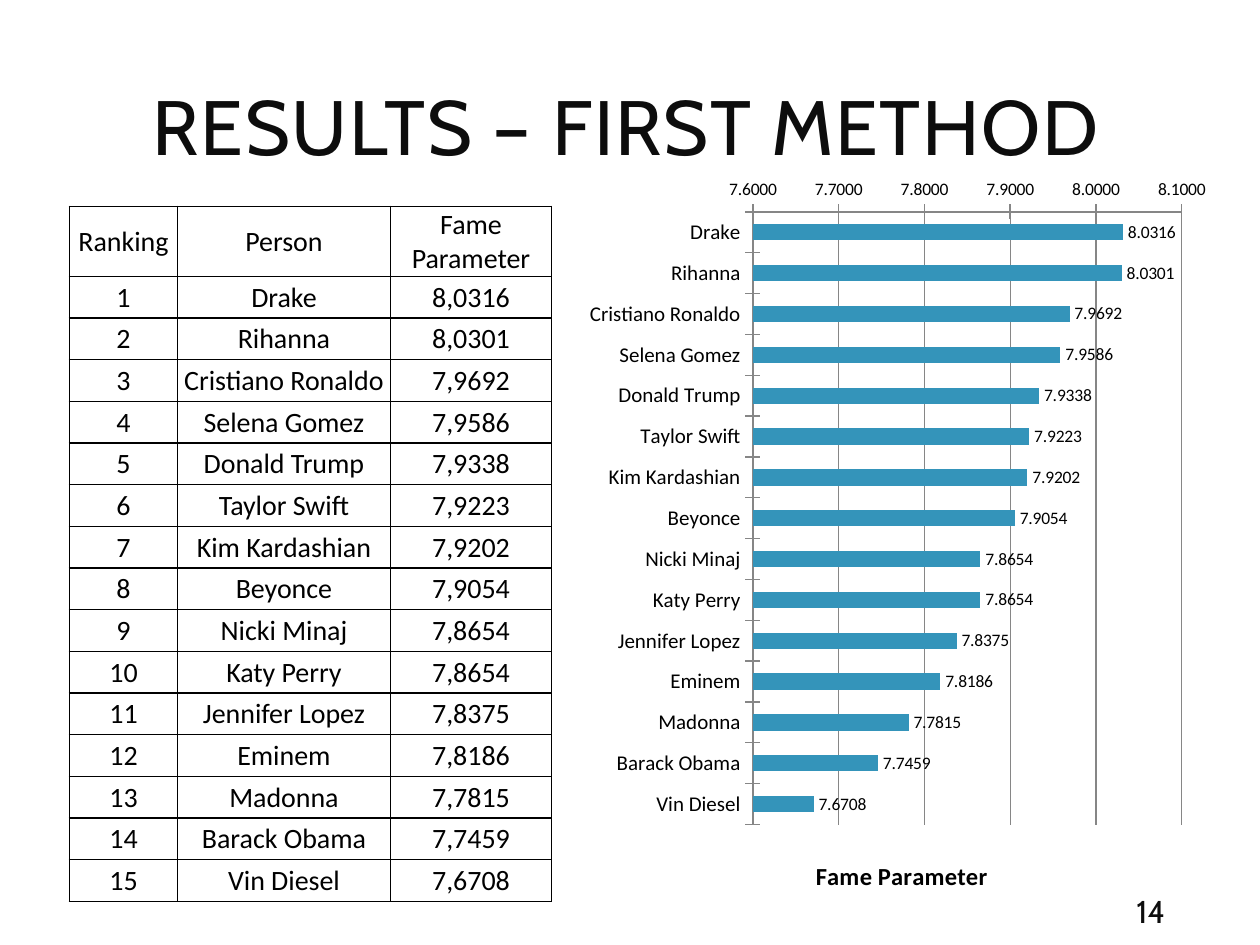
from lxml.etree import SubElement
from pptx import Presentation
from pptx.chart.data import CategoryChartData
from pptx.dml.color import RGBColor
from pptx.enum.chart import XL_CHART_TYPE as ChartType
from pptx.enum.chart import XL_LABEL_POSITION as LabelPosition
from pptx.enum.chart import XL_TICK_MARK as TickMark
from pptx.enum.text import MSO_ANCHOR as Anchor
from pptx.enum.text import PP_ALIGN as Align
from pptx.oxml.ns import qn
from pptx.util import Cm, Pt

COLORS = {"heading": "0D0D0D", "text": "000000", "bar": "3494BA", "grid": "868686"}
HEADING_FONT, BODY_FONT = "Cabin", "Calibri"
HEADERS = ["Ranking", "Person", "Fame Parameter"]
FAME = {
    "Drake": 8.0316,
    "Rihanna": 8.0301,
    "Cristiano Ronaldo": 7.9692,
    "Selena Gomez": 7.9586,
    "Donald Trump": 7.9338,
    "Taylor Swift": 7.9223,
    "Kim Kardashian": 7.9202,
    "Beyonce": 7.9054,
    "Nicki Minaj": 7.8654,
    "Katy Perry": 7.8654,
    "Jennifer Lopez": 7.8375,
    "Eminem": 7.8186,
    "Madonna": 7.7815,
    "Barack Obama": 7.7459,
    "Vin Diesel": 7.6708,
}


def color(name):
    return RGBColor.from_string(COLORS[name])


def set_layout(host, index, **fractions):
    """Place a chart part by fractions of the chart's size."""
    for old in host.findall(qn("c:layout")):
        host.remove(old)
    layout = SubElement(host, qn("c:layout"))
    host.insert(index, layout)
    manual = SubElement(layout, qn("c:manualLayout"))
    if "w" in fractions:
        SubElement(manual, qn("c:layoutTarget")).set("val", "inner")
    for side in ("xMode", "yMode"):
        SubElement(manual, qn(f"c:{side}")).set("val", "edge")
    for key, value in fractions.items():
        SubElement(manual, qn(f"c:{key}")).set("val", str(value))


class SlideBuilder:
    """Holds the page and the style shared by its elements."""

    def __init__(self, page):
        self.page = page

    def style(self, font, size, name=BODY_FONT, tint="text", bold=False):
        font.name, font.size, font.bold = name, Pt(size), bold
        font.color.rgb = color(tint)

    def frame(self, box, left, top, width, height):
        box.left, box.top, box.width, box.height = map(Cm, (left, top, width, height))
        text = box.text_frame
        text.word_wrap = True
        text.vertical_anchor = Anchor.MIDDLE
        text.margin_left = text.margin_right = Cm(0.33)
        text.margin_top = text.margin_bottom = Cm(0.18)
        return text.paragraphs[0]

    def title(self, words, *place):
        para = self.frame(self.page.shapes.title, *place)
        para.alignment = Align.CENTER
        para.line_spacing = 0.8
        span = para.add_run()
        span.text = words
        self.style(span.font, 44, HEADING_FONT, "heading")
        span._r.get_or_add_rPr().set("spc", "100")

    def page_number(self, number, *place):
        box = self.page.shapes.add_textbox(*map(Cm, place))
        span = self.frame(box, *place).add_run()
        span.text = str(number)
        self.style(span.font, 18, HEADING_FONT, "heading")

    def cell(self, cell, words):
        cell.vertical_anchor = Anchor.MIDDLE
        cell.margin_left = cell.margin_right = cell.margin_top = Cm(0.02)
        cell.margin_bottom = 0
        para = cell.text_frame.paragraphs[0]
        para.alignment = Align.CENTER
        span = para.add_run()
        span.text = words
        self.style(span.font, 16)
        properties = cell._tc.get_or_add_tcPr()
        for side in ("lnL", "lnR", "lnT", "lnB"):
            line = SubElement(properties, qn(f"a:{side}"), w=str(Pt(1)))
            fill = SubElement(line, qn("a:solidFill"))
            SubElement(fill, qn("a:srgbClr"), val=COLORS["text"])
        cell.fill.background()

    def table(self, rows, left, top, widths, header_height, row_height):
        heights = [header_height] + [row_height] * (len(rows) - 1)
        size = (left, top, sum(widths), sum(heights))
        table = self.page.shapes.add_table(
            len(rows), len(widths), *map(Cm, size)
        ).table
        for column, width in zip(table.columns, widths):
            column.width = Cm(width)
        for row, height, texts in zip(table.rows, heights, rows):
            row.height = Cm(height)
            for cell, words in zip(row.cells, texts):
                self.cell(cell, words)

    def bar_chart(self, values, axis_name, *place):
        data = CategoryChartData(number_format="0.0000")
        data.categories = list(values)
        data.add_series("Series 1", list(values.values()))
        chart = self.page.shapes.add_chart(
            ChartType.BAR_CLUSTERED, *map(Cm, place), data
        ).chart
        chart.has_legend = chart.has_title = False
        self.style(chart.font, 10)

        people, scale = chart.category_axis, chart.value_axis
        people.reverse_order = True
        for axis, size in ((people, 12), (scale, 10)):
            self.style(axis.tick_labels.font, size)
            axis.major_tick_mark = TickMark.CROSS
            axis.format.line.color.rgb = color("grid")
        scale.minimum_scale, scale.maximum_scale = 7.6, 8.1
        scale.major_unit = 0.1
        scale.tick_labels.number_format = "0.0000"
        scale.tick_labels.number_format_is_linked = False
        scale.has_major_gridlines = True
        scale.major_gridlines.format.line.color.rgb = color("grid")
        span = scale.axis_title.text_frame.paragraphs[0].add_run()
        span.text = axis_name
        self.style(span.font, 14, bold=True)

        plot = chart.plots[0]
        plot.vary_by_categories = False
        plot.gap_width = 150
        fill = plot.series[0].format.fill
        fill.solid()
        fill.fore_color.rgb = color("bar")
        plot.has_data_labels = True
        labels = plot.data_labels
        labels.show_value = True
        labels.position = LabelPosition.OUTSIDE_END
        labels.number_format, labels.number_format_is_linked = "0.0000", False
        self.style(labels.font, 10)

        root = chart._chartSpace
        set_layout(root.xpath(".//c:plotArea")[0], 0, x=0.28, y=0.06, w=0.66, h=0.83)
        set_layout(root.xpath(".//c:valAx/c:title")[0], 1, x=0.37, y=0.93)


def main():
    deck = Presentation()
    deck.slide_width, deck.slide_height = Cm(25.4), Cm(19.05)
    title_only = deck.slide_layouts[5]
    builder = SlideBuilder(deck.slides.add_slide(title_only))
    rows = [HEADERS] + [
        [str(rank), person, f"{fame:.4f}".replace(".", ",")]
        for rank, (person, fame) in enumerate(FAME.items(), 1)
    ]
    builder.title("RESULTS – FIRST METHOD", 1.2, 1.2, 22.86, 2.97)
    builder.table(rows, 1.4, 4.16, [2.18, 4.29, 3.25], 1.41, 0.84)
    builder.page_number(14, 22.58, 17.98, 2.03, 0.76)
    builder.bar_chart(FAME, "Fame Parameter", 11.51, 3.38, 13.1, 14.88)
    deck.save("out.pptx")


if __name__ == "__main__":
    main()
